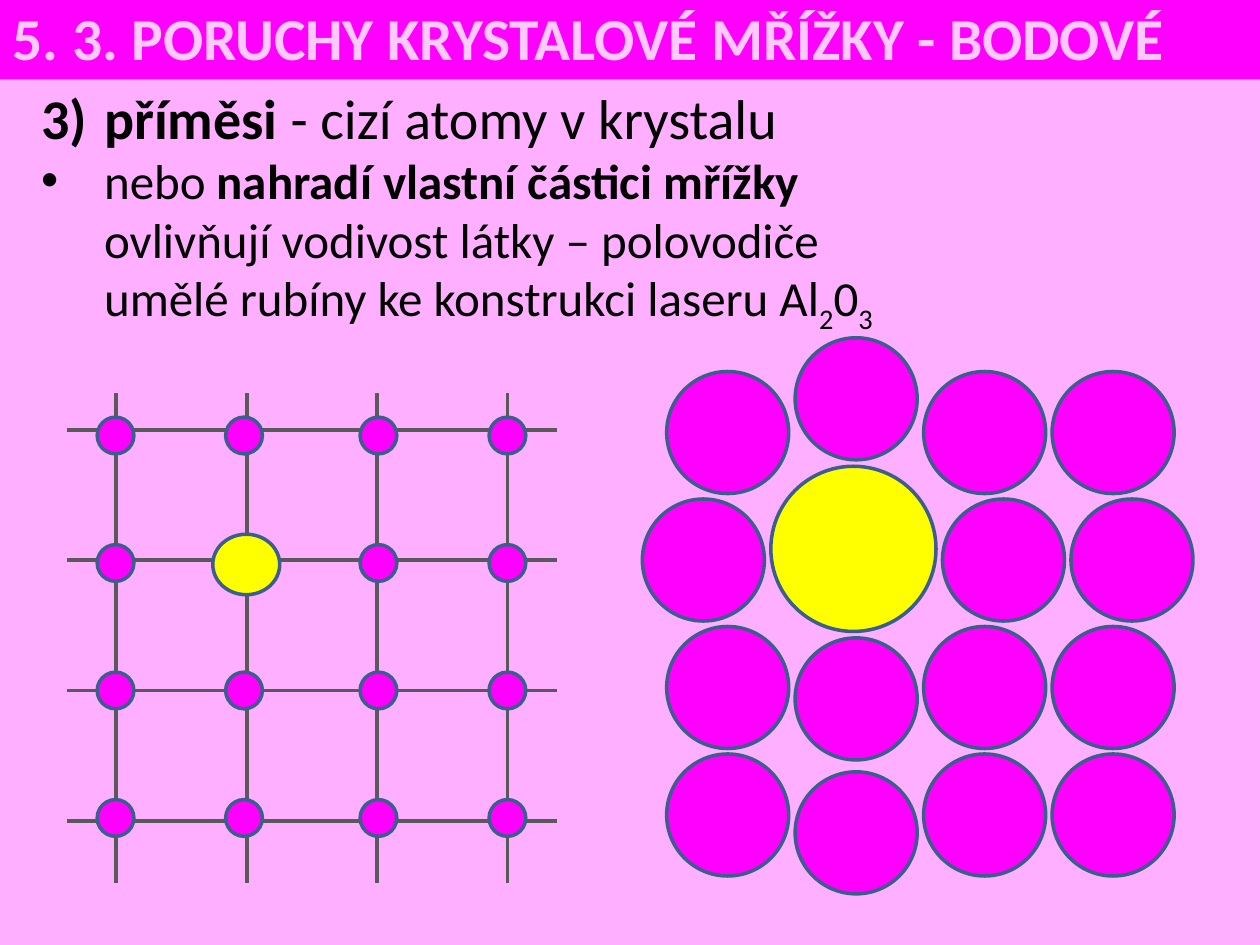
from dataclasses import dataclass

from lxml.etree import SubElement
from pptx import Presentation
from pptx.dml.color import RGBColor
from pptx.enum.shapes import MSO_CONNECTOR as Link, MSO_SHAPE as Shape
from pptx.enum.text import MSO_ANCHOR as Anchor, MSO_AUTO_SIZE as Fit, PP_ALIGN as Align
from pptx.oxml.ns import qn
from pptx.util import Cm, Pt

PINK = "FFAFFF"
PALE = "FFC8FF"
MAGENTA = "FF00FF"
YELLOW = "FFFF00"
EDGE = "3A5F8C"
GRAY = "595959"
BLACK = "000000"
STEP = 2.57
GRID = 2.63


@dataclass
class Atom:
    left: float
    top: float
    width: float
    height: float
    fill: str = MAGENTA


@dataclass
class Bond:
    x1: float
    y1: float
    x2: float
    y2: float


def color(code: str) -> RGBColor:
    return RGBColor.from_string(code)


def paint(fill, code: str) -> None:
    fill.solid()
    fill.fore_color.rgb = color(code)


def place(shape, left: float, top: float, width: float, height: float) -> None:
    shape.left, shape.top = Cm(left), Cm(top)
    shape.width, shape.height = Cm(width), Cm(height)


def write(par, text: str, *, size: float, code: str = BLACK,
          bold: bool = False, base: int = 0) -> None:
    for i, line in enumerate(text.split("\n")):
        if i:
            par.add_line_break()
        if not line:
            continue
        run = par.add_run()
        run.text = line
        font = run.font
        font.name, font.size, font.bold = "Calibri", Pt(size), bold
        font.color.rgb = color(code)
        if base:
            font._element.set("baseline", str(base * 1000))


def mark(par, tag: str, **attrs: str) -> None:
    props = par._p.get_or_add_pPr()
    indent = Cm(1.27)
    props.set("marL", str(indent))
    props.set("indent", str(-indent))
    if tag == "a:buChar":
        SubElement(props, qn("a:buFont")).set("typeface", "Arial")
    SubElement(props, qn(tag), attrs)


def draw_atom(slide, atom: Atom) -> None:
    ball = slide.shapes.add_shape(Shape.OVAL, 0, 0, 0, 0)
    place(ball, atom.left, atom.top, atom.width, atom.height)
    paint(ball.fill, atom.fill)
    paint(ball.line.fill, EDGE)
    ball.line.width = Pt(2)
    ball.shadow.inherit = False


def draw_bond(slide, bond: Bond) -> None:
    line = slide.shapes.add_connector(
        Link.STRAIGHT, Cm(bond.x1), Cm(bond.y1), Cm(bond.x2), Cm(bond.y2))
    paint(line.line.fill, GRAY)
    line.line.width = Pt(2.25)
    SubElement(line._element.spPr, qn("a:effectLst"))


def add_title(slide) -> None:
    title = slide.shapes.title
    place(title, 0, -0.1, 25.4, 1.7)
    paint(title.fill, MAGENTA)
    frame = title.text_frame
    frame.auto_size = Fit.NONE
    frame.vertical_anchor = Anchor.TOP
    par = frame.paragraphs[0]
    par.alignment = Align.LEFT
    write(par, "5. 3. PORUCHY KRYSTALOVÉ MŘÍŽKY - BODOVÉ",
          size=34, code=PALE, bold=True)


def add_body(slide) -> None:
    box = slide.shapes.add_textbox(0, 0, 0, 0)
    place(box, 0.58, 1.55, 24.82, 5.21)
    frame = box.text_frame
    frame.word_wrap = True
    head = frame.paragraphs[0]
    mark(head, "a:buAutoNum", type="arabicParenR", startAt="3")
    write(head, "příměsi", size=32, bold=True)
    write(head, " - cizí atomy v\u00a0krystalu", size=32)
    item = frame.add_paragraph()
    mark(item, "a:buChar", char="•")
    write(item, "nebo", size=28)
    write(item, " nahradí vlastní částici mřížky\n", size=28, bold=True)
    write(item, "ovlivňují vodivost látky – polovodiče\n"
                "umělé rubíny ke konstrukci laseru Al", size=28)
    for text, base in (("2", -25), ("0", 0), ("3", -25)):
        write(item, text, size=28, base=base)


def add_pack(slide) -> None:
    size, left, top = 2.46, 13.44, 7.49
    cols = [left + 2.59 * i for i in range(4)]
    shifts = {0: -0.68, 2: 0.23, 3: 0.36}
    for row in range(4):
        y = top + STEP * row
        if row == 1:
            draw_atom(slide, Atom(15.54, 9.4, 3.33, 3.33, YELLOW))
            for x in (12.95, 19, 21.59):
                draw_atom(slide, Atom(x, y, size, size))
            continue
        for col, x in enumerate(cols):
            shift = shifts[row] if col == 1 else 0
            draw_atom(slide, Atom(x, y + shift, size, size))


def add_net(slide) -> None:
    for i in range(4):
        x, y = 2.34 + GRID * i, 8.66 + GRID * i
        draw_bond(slide, Bond(1.35, y, 11.23, y))
        draw_bond(slide, Bond(x, 7.92, x, 17.81))
    for row in range(4):
        for col, x in enumerate((1.96, 4.55, 7.26, 9.86)):
            if (row, col) != (1, 1):
                draw_atom(slide, Atom(x, 8.41 + STEP * row, 0.74, 0.74))
    draw_atom(slide, Atom(4.29, 10.77, 1.35, 1.22, YELLOW))


def main() -> None:
    deck = Presentation()
    deck.slide_width, deck.slide_height = Cm(25.4), Cm(19.05)
    slide = deck.slides.add_slide(deck.slide_layouts[5])
    paint(slide.background.fill, PINK)
    add_title(slide)
    add_body(slide)
    add_pack(slide)
    add_net(slide)
    deck.save("out.pptx")


if __name__ == "__main__":
    main()
